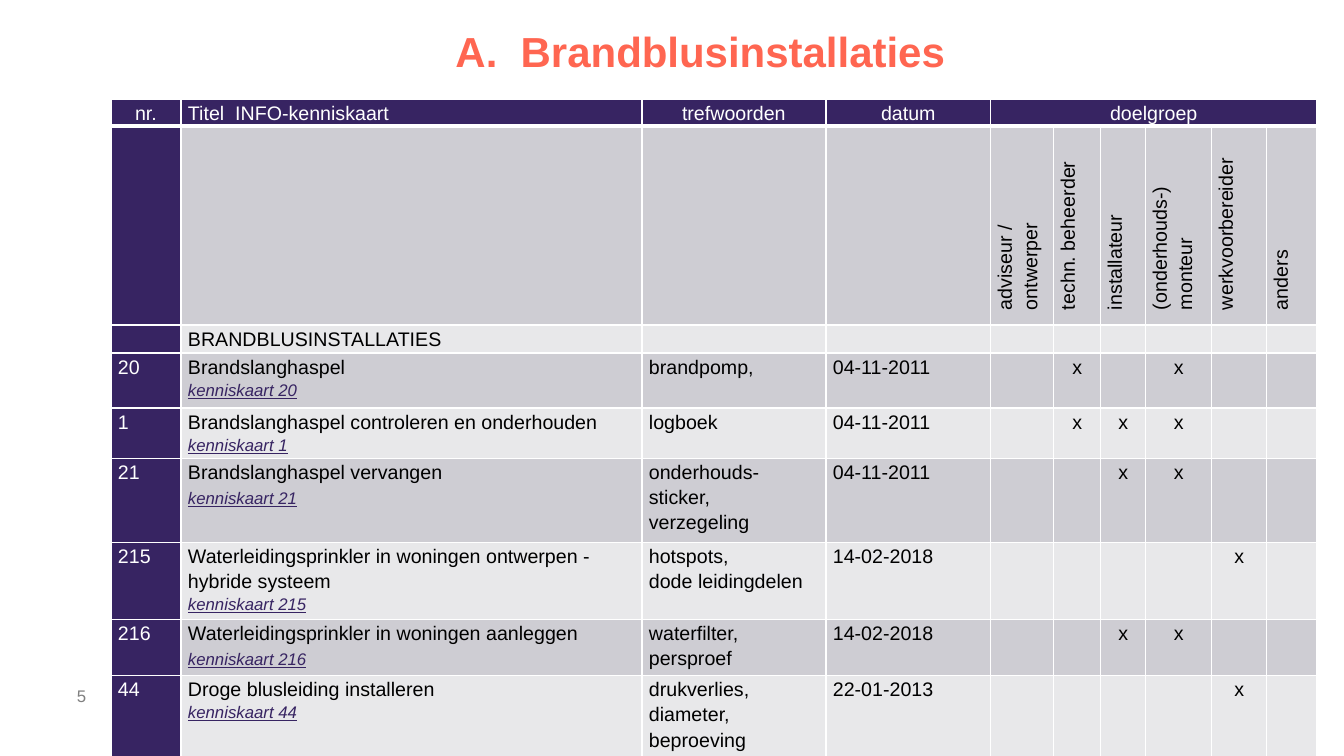
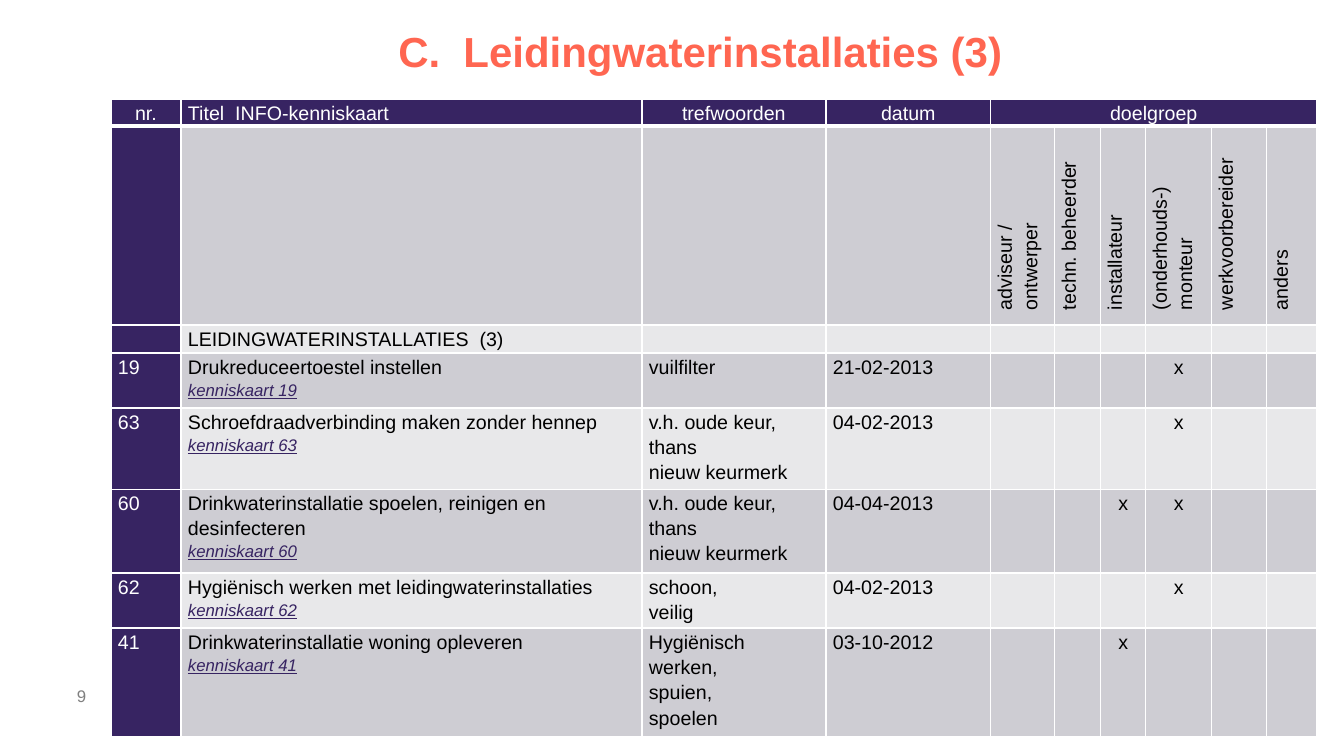
from dataclasses import dataclass

from lxml import etree
from pptx import Presentation
from pptx.dml.color import RGBColor
from pptx.enum.text import MSO_ANCHOR, PP_ALIGN
from pptx.oxml.ns import qn
from pptx.util import Pt

LEFT, CENTER = PP_ALIGN.LEFT, PP_ALIGN.CENTER
MIDDLE = MSO_ANCHOR.MIDDLE

WHITE = RGBColor(0xFF, 0xFF, 0xFF)
BLACK = RGBColor(0x00, 0x00, 0x00)
GRAY = RGBColor(0x80, 0x80, 0x80)
CORAL = RGBColor(0xFF, 0x66, 0x51)
PURPLE = RGBColor(0x37, 0x24, 0x62)
BANDS = (RGBColor(0xCE, 0xCD, 0xD3), RGBColor(0xE8, 0xE8, 0xEA))

FONT = "Arial"
BODY_PT, LINK_PT = 14, 12
EMU_PER_PX = 914400 / 100.8
SLIDE_W, SLIDE_H = 1344, 756
TABLE_X, TABLE_Y = 111, 99
CELL_INSET = 7
INDENT = 8
HEADER_H, GROUP_H, SECTION_H = 26, 199, 28
FIRST_GROUP = 4

HEADERS = ("nr.", "Titel  INFO-kenniskaart", "trefwoorden", "datum", "doelgroep")
GROUPS = (
    ("adviseur /", "ontwerper"),
    ("techn. beheerder",),
    ("installateur",),
    ("(onderhouds-)", "monteur"),
    ("werkvoorbereider",),
    ("anders",),
)


@dataclass(frozen=True)
class Card:
    nr: str
    title: str
    keywords: tuple[str, ...]
    date: str
    marks: str
    height: int
    tail: int = 0
    tail_pt: int = LINK_PT


@dataclass(frozen=True)
class Page:
    number: str
    title: str
    section: str
    widths: tuple[int, ...]
    cards: tuple[Card, ...]


PAGES = (
    Page(
        "5", "A.  Brandblusinstallaties", "BRANDBLUSINSTALLATIES",
        (70, 461, 184, 165, 63, 47, 45, 66, 55, 50),
        (
            Card("20", "Brandslanghaspel", ("brandpomp,",), "04-11-2011", "-x-x--", 55),
            Card("1", "Brandslanghaspel controleren en onderhouden", ("logboek",),
                 "04-11-2011", "-xxx--", 47),
            Card("21", "Brandslanghaspel vervangen", ("onderhouds-sticker,", "verzegeling"),
                 "04-11-2011", "--xx--", 84, 147, BODY_PT),
            Card("215", "Waterleidingsprinkler in woningen ontwerpen - hybride systeem",
                 ("hotspots,", "dode leidingdelen"), "14-02-2018", "----x-", 72),
            Card("216", "Waterleidingsprinkler in woningen aanleggen",
                 ("waterfilter,", "persproef"), "14-02-2018", "--xx--", 56, 124, BODY_PT),
            Card("44", "Droge blusleiding installeren", ("drukverlies, diameter,", "beproeving"),
                 "22-01-2013", "----x-", 83, 114),
        ),
    ),
    Page(
        "9", "C.  Leidingwaterinstallaties (3)", "LEIDINGWATERINSTALLATIES  (3)",
        (70, 461, 184, 165, 64, 46, 45, 66, 55, 50),
        (
            Card("19", "Drukreduceertoestel instellen", ("vuilfilter",),
                 "21-02-2013", "---x--", 55),
            Card("63", "Schroefdraadverbinding maken zonder hennep",
                 ("v.h. oude keur,", "thans", "nieuw keurmerk"),
                 "04-02-2013", "---x--", 76, 119),
            Card("60", "Drinkwaterinstallatie spoelen, reinigen en desinfecteren",
                 ("v.h. oude keur,", "thans", "nieuw keurmerk"),
                 "04-04-2013", "--xx--", 84),
            Card("62", "Hygiënisch werken met leidingwaterinstallaties", ("schoon,", "veilig"),
                 "04-02-2013", "---x--", 55, 114),
            Card("41", "Drinkwaterinstallatie woning opleveren",
                 ("Hygiënisch werken,", "spuien,", "spoelen"),
                 "03-10-2012", "--x---", 102, 123),
        ),
    ),
)


def px(n: int) -> int:
    return round(n * EMU_PER_PX)


def add_run(p, text: str, *, size: int = BODY_PT, color: RGBColor = BLACK,
            bold: bool = False, link: bool = False) -> None:
    r = p.add_run()
    r.text = text
    f = r.font
    f.name, f.size, f.bold = FONT, Pt(size), bold
    f.italic = f.underline = link
    f.color.rgb = color


def add_text(s, text: str, x: int, y: int, w: int, h: int, *, size: int,
             color: RGBColor, bold: bool = False, align=LEFT, spacing: float = 1.0) -> None:
    tf = s.shapes.add_textbox(px(x), px(y), px(w), px(h)).text_frame
    tf.word_wrap = True
    tf.vertical_anchor = MIDDLE
    tf.margin_left = tf.margin_right = tf.margin_top = tf.margin_bottom = 0
    p = tf.paragraphs[0]
    p.alignment, p.line_spacing = align, spacing
    add_run(p, text, size=size, color=color, bold=bold)


def set_borders(cell, top_pt: int, bottom_pt: int) -> None:
    tc_pr = cell._tc.get_or_add_tcPr()
    for side, width in (("L", 1), ("R", 1), ("T", top_pt), ("B", bottom_pt)):
        ln = etree.SubElement(tc_pr, qn(f"a:ln{side}"), w=str(Pt(width)))
        fill = etree.SubElement(ln, qn("a:solidFill"))
        etree.SubElement(fill, qn("a:srgbClr"), val=str(WHITE))


def style_cell(cell, row: int, col: int) -> None:
    set_borders(cell, 3 if row == 1 else 1, 3 if row == 0 else 1)
    cell.fill.solid()
    cell.fill.fore_color.rgb = PURPLE if row == 0 or col == 0 else BANDS[(row - 1) % 2]
    cell.margin_left = cell.margin_right = px(CELL_INSET)
    cell.margin_top = cell.margin_bottom = 0
    end = cell.text_frame.paragraphs[0]._p.get_or_add_endParaRPr()
    end.set("sz", str(BODY_PT * 100))


def write_cell(cell, *lines: str, color: RGBColor = BLACK, align=LEFT,
               vertical: bool = False) -> None:
    tf = cell.text_frame
    if vertical:
        cell._tc.get_or_add_tcPr().set("vert", "vert270")
    for i, line in enumerate(lines):
        p = tf.add_paragraph() if i else tf.paragraphs[0]
        if vertical:
            p._p.get_or_add_pPr().set("marL", str(px(INDENT)))
        p.alignment, p.line_spacing = align, 1.15
        add_run(p, line, color=color)


def add_link(cell, card: Card) -> None:
    p = cell.text_frame.add_paragraph()
    p.line_spacing = 1.15
    if card.tail:
        tabs = etree.SubElement(p._p.get_or_add_pPr(), qn("a:tabLst"))
        etree.SubElement(tabs, qn("a:tab"), pos=str(px(card.tail)), algn="l")
    add_run(p, f"kenniskaart {card.nr}", size=LINK_PT, color=PURPLE, link=True)
    if card.tail:
        add_run(p, "\t", size=card.tail_pt, color=PURPLE, link=True)


def write_card(tbl, row: int, card: Card) -> None:
    write_cell(tbl.cell(row, 0), card.nr, color=WHITE)
    write_cell(tbl.cell(row, 1), card.title)
    add_link(tbl.cell(row, 1), card)
    write_cell(tbl.cell(row, 2), *card.keywords)
    write_cell(tbl.cell(row, 3), card.date)
    for col, mark in enumerate(card.marks, FIRST_GROUP):
        if mark == "x":
            write_cell(tbl.cell(row, col), mark, align=CENTER)


def add_card_table(s, page: Page) -> None:
    heights = (HEADER_H, GROUP_H, SECTION_H, *(card.height for card in page.cards))
    tbl = s.shapes.add_table(len(heights), len(page.widths), px(TABLE_X), px(TABLE_Y),
                             px(sum(page.widths)), px(sum(heights))).table
    tbl.first_row = tbl.horz_banding = False
    for column, width in zip(tbl.columns, page.widths):
        column.width = px(width)
    for row, height in enumerate(heights):
        tbl.rows[row].height = px(height)
        for col in range(len(page.widths)):
            style_cell(tbl.cell(row, col), row, col)
    tbl.cell(0, FIRST_GROUP).merge(tbl.cell(0, len(page.widths) - 1))
    for col, text in enumerate(HEADERS):
        write_cell(tbl.cell(0, col), text, color=WHITE, align=LEFT if col == 1 else CENTER)
    for col, lines in enumerate(GROUPS, FIRST_GROUP):
        write_cell(tbl.cell(1, col), *lines, vertical=True)
    write_cell(tbl.cell(2, 1), page.section)
    for row, card in enumerate(page.cards, 3):
        write_card(tbl, row, card)


def add_page(prs, page: Page) -> None:
    s = prs.slides.add_slide(prs.slide_layouts[6])
    add_text(s, page.number, 77, 676, 72, 40, size=12, color=GRAY)
    add_card_table(s, page)
    add_text(s, page.title, 107, 27, 1187, 54, size=30, color=CORAL, bold=True,
             align=CENTER, spacing=0.9)


def main() -> None:
    prs = Presentation()
    prs.slide_width, prs.slide_height = px(SLIDE_W), px(SLIDE_H)
    for page in PAGES:
        add_page(prs, page)
    prs.save("out.pptx")


if __name__ == "__main__":
    main()
